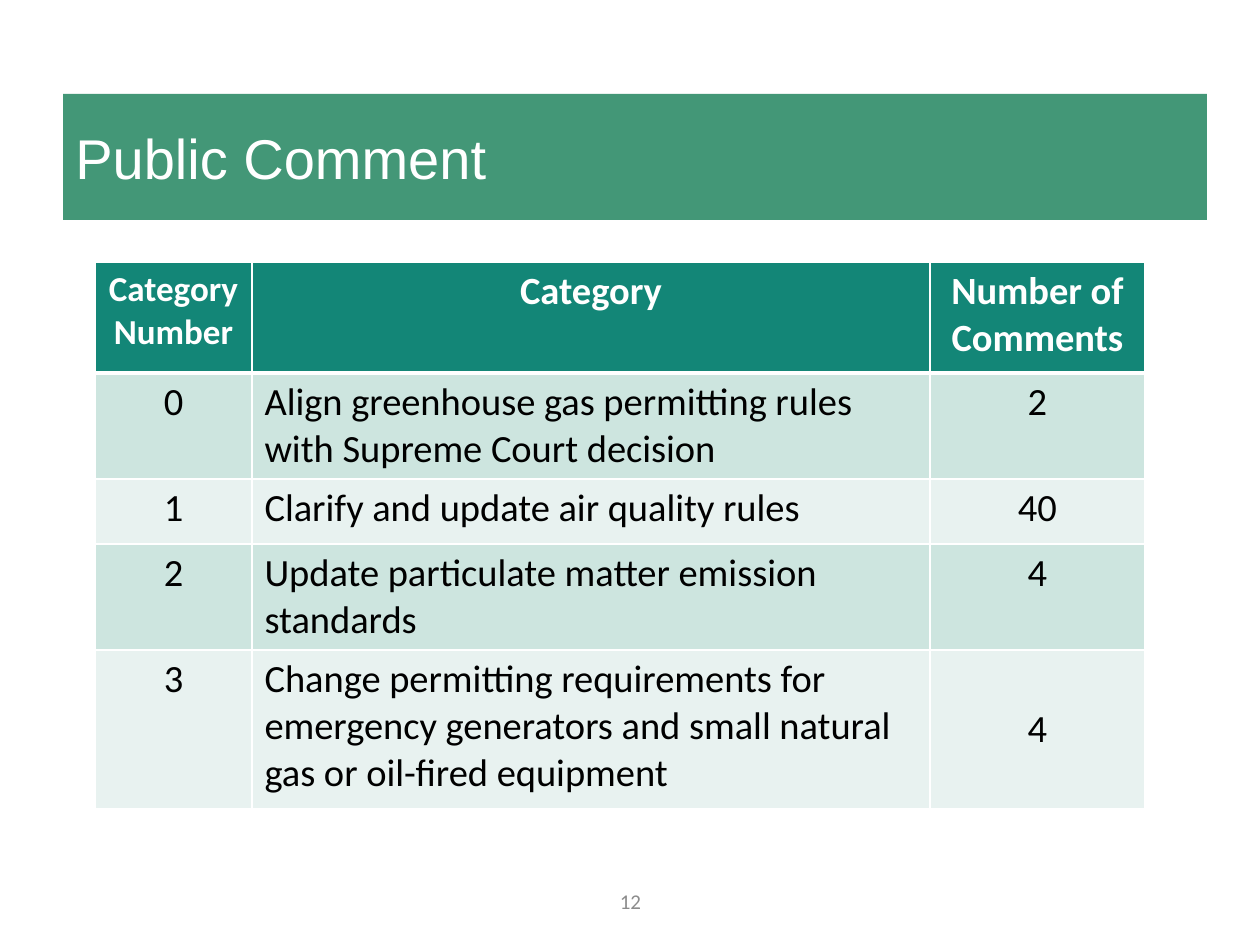
from lxml import etree
from pptx import Presentation
from pptx import util as u
from pptx.dml.color import RGBColor
from pptx.enum import shapes, text
from pptx.oxml.ns import qn

# Content
TITLE = "Public Comment"
PAGE = "12"
HEADERS = ["Category Number", "Category", "Number of Comments"]
ROWS = [
    ("0", "Align greenhouse gas permitting rules with Supreme Court decision", "2"),
    ("1", "Clarify and update air quality rules", "40"),
    ("2", "Update particulate matter emission standards", "4"),
    ("3", "Change permitting requirements for emergency generators "
          "and small natural gas or oil-fired equipment", "4"),
]

# Layout in px, 126 to the inch
PX = 914400 // 126
SLIDE = (1260, 945)
BANNER = (63, 94, 1144, 126)
PAGE_BOX = (431, 876, 399, 50)
TABLE_LEFT, TABLE_TOP = 95, 262
COLUMN_WIDTHS = [157, 678, 215]
ROW_HEIGHTS = [111, 106, 65, 106, 159]
COLORS = {
    "banner": "439777", "header": "138677", "odd": "CDE5DF", "even": "E8F2F0",
    "white": "FFFFFF", "black": "000000", "gray": "8C8C8C",
}


def color(name):
    return RGBColor.from_string(COLORS[name])


def emu(lengths):
    return [u.Emu(length * PX) for length in lengths]


def write(frame, words, size, ink, font="Calibri", bold=False,
          align=text.PP_ALIGN.CENTER):
    frame.word_wrap = True
    paragraph = frame.paragraphs[0]
    paragraph.alignment = align
    run = paragraph.add_run()
    run.text = words
    run.font.size = u.Pt(size)
    run.font.name = font
    run.font.bold = bold
    run.font.color.rgb = color(ink)


def add_borders(cell, top, bottom):
    properties = cell._tc.get_or_add_tcPr()
    for side, points in (("L", 1), ("R", 1), ("T", top), ("B", bottom)):
        line = etree.SubElement(properties, qn(f"a:ln{side}"), w=str(u.Pt(points)))
        fill = etree.SubElement(line, qn("a:solidFill"))
        etree.SubElement(fill, qn("a:srgbClr"), val=COLORS["white"])


prs = Presentation()
prs.slide_width, prs.slide_height = emu(SLIDE)
slide = prs.slides.add_slide(prs.slide_layouts[6])

# Page number
page = slide.shapes.add_textbox(*emu(PAGE_BOX)).text_frame
page.vertical_anchor = text.MSO_ANCHOR.MIDDLE
write(page, PAGE, 12, "gray")

# Title banner
banner = slide.shapes.add_shape(shapes.MSO_SHAPE.RECTANGLE, *emu(BANNER))
banner.shadow.inherit = False
banner.fill.solid()
banner.fill.fore_color.rgb = color("banner")
banner.line.fill.background()
banner.text_frame.vertical_anchor = text.MSO_ANCHOR.MIDDLE
write(banner.text_frame, TITLE, 32, "white", "Arial", align=text.PP_ALIGN.LEFT)

# Comment table
table_box = (TABLE_LEFT, TABLE_TOP, sum(COLUMN_WIDTHS), sum(ROW_HEIGHTS))
table = slide.shapes.add_table(
    len(ROW_HEIGHTS), len(COLUMN_WIDTHS), *emu(table_box)).table
for column, width in zip(table.columns, emu(COLUMN_WIDTHS)):
    column.width = width
for row, height in zip(table.rows, emu(ROW_HEIGHTS)):
    row.height = height

for r, row in enumerate([HEADERS, *ROWS]):
    header = r == 0
    for c, words in enumerate(row):
        cell = table.cell(r, c)
        add_borders(cell, top=3 if r == 1 else 1, bottom=3 if header else 1)
        cell.fill.solid()
        cell.fill.fore_color.rgb = color(
            "header" if header else "odd" if r % 2 else "even")
        left = c == 1 and not header
        write(cell.text_frame, words,
              size=20 if header and c == 0 else 22,
              ink="white" if header else "black", bold=header,
              align=text.PP_ALIGN.LEFT if left else text.PP_ALIGN.CENTER)

# The last count sits level with the middle of its three-line category
table.cell(len(ROWS), 2).vertical_anchor = text.MSO_ANCHOR.MIDDLE

prs.save("out.pptx")
